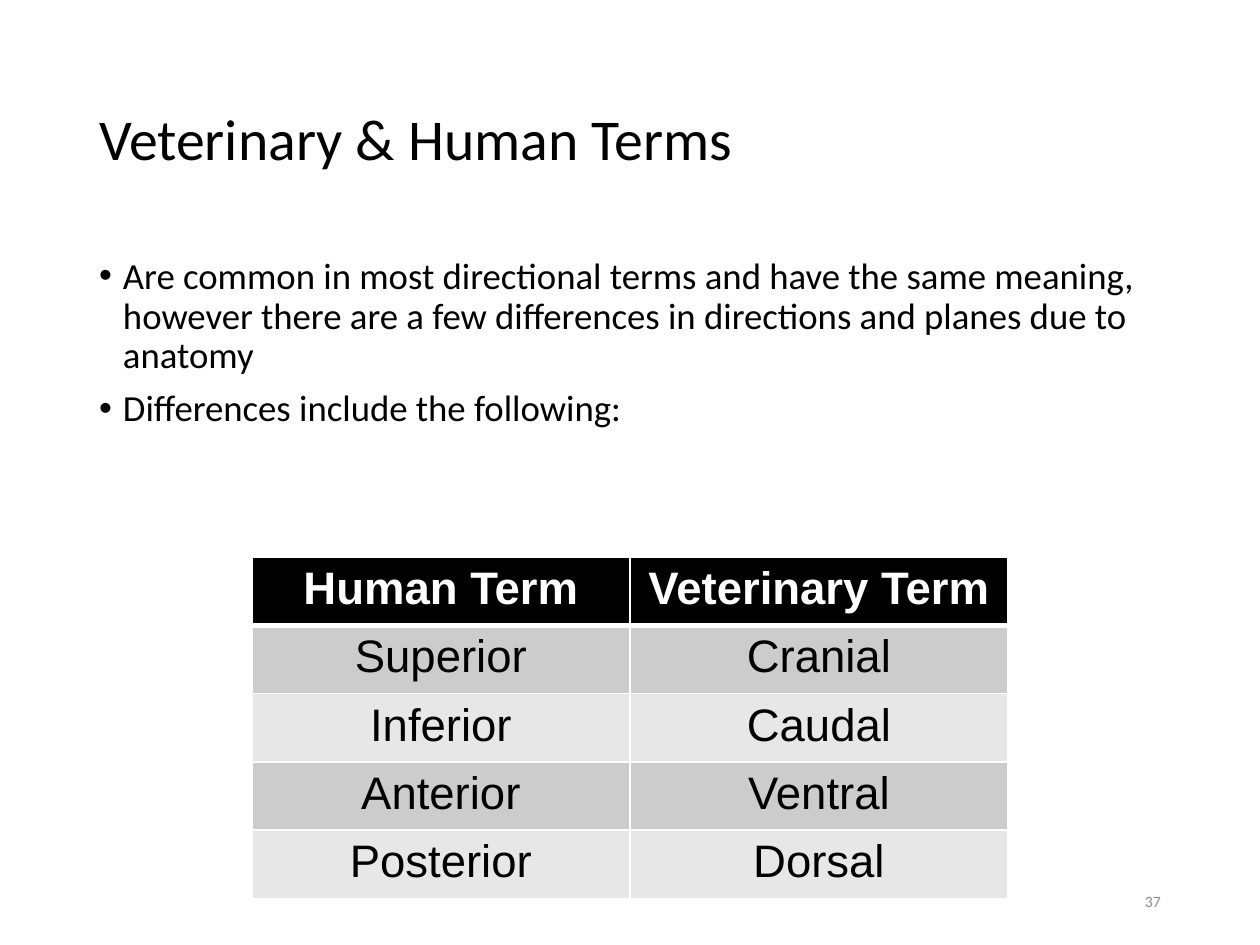
import pptx
import pptx.dml.color
import pptx.enum.text
import pptx.oxml
import pptx.oxml.ns
import pptx.util

Cm = pptx.util.Cm
Pt = pptx.util.Pt
ALIGN = pptx.enum.text.PP_ALIGN
ANCHOR = pptx.enum.text.MSO_ANCHOR
NAMESPACE = pptx.oxml.ns.nsdecls("a")


def color(code):
    return pptx.dml.color.RGBColor.from_string(code)


class SlideBuilder:
    """Holds the style and the current slide, and adds each kind of element."""

    body_font = "Calibri"
    table_font = "Arial"
    black = "000000"
    white = "FFFFFF"
    grey = "8C8C8C"
    bands = ("CCCCCC", "E7E7E7")

    def __init__(self, slide):
        self.slide = slide

    def add_run(self, paragraph, text, size, code, font, bold=False):
        run = paragraph.add_run()
        run.text = text
        run.font.name = font
        run.font.size = Pt(size)
        run.font.bold = bold
        run.font.color.rgb = color(code)

    def add_text(self, box, lines, size, code=black, anchor=ANCHOR.MIDDLE,
                 align=ALIGN.LEFT, spacing=1.0, bullet=False):
        shape = self.slide.shapes.add_textbox(*map(Cm, box))
        frame = shape.text_frame
        frame.word_wrap = True
        frame.vertical_anchor = anchor
        for index, line in enumerate(lines):
            paragraph = frame.add_paragraph() if index else frame.paragraphs[0]
            if bullet:
                self.add_bullet(paragraph)
            paragraph.alignment = align
            paragraph.line_spacing = spacing
            paragraph.space_before = Pt(7.5 if index else 0)
            self.add_run(paragraph, line, size, code, self.body_font)

    def add_bullet(self, paragraph):
        properties = paragraph._p.get_or_add_pPr()
        properties.set("marL", str(Cm(0.48)))
        properties.set("indent", str(Cm(-0.48)))
        for tag in ('buFont {} typeface="Arial"', 'buChar {} char="•"'):
            properties.append(pptx.oxml.parse_xml(f"<a:{tag.format(NAMESPACE)}/>"))

    def add_border(self, cell, side, width):
        cell._tc.get_or_add_tcPr().append(pptx.oxml.parse_xml(
            f'<a:ln{side} {NAMESPACE} w="{Pt(width)}"><a:solidFill>'
            f'<a:srgbClr val="{self.white}"/></a:solidFill></a:ln{side}>'))

    def add_table(self, box, rows, size):
        frame = self.slide.shapes.add_table(len(rows), len(rows[0]), *map(Cm, box))
        for row_index, row in enumerate(rows):
            header = row_index == 0
            fill = self.black if header else self.bands[(row_index - 1) % 2]
            widths = {"L": 1, "R": 1, "T": 3 if row_index == 1 else 1, "B": 3 if header else 1}
            for column_index, text in enumerate(row):
                cell = frame.table.cell(row_index, column_index)
                for side, width in widths.items():
                    self.add_border(cell, side, width)
                cell.fill.solid()
                cell.fill.fore_color.rgb = color(fill)
                paragraph = cell.text_frame.paragraphs[0]
                paragraph.alignment = ALIGN.CENTER
                self.add_run(paragraph, text, size, self.white if header else self.black,
                             self.table_font, header)


def main():
    presentation = pptx.Presentation()
    presentation.slide_width = Cm(25.4)
    presentation.slide_height = Cm(19.05)
    builder = SlideBuilder(presentation.slides.add_slide(presentation.slide_layouts[6]))
    builder.add_text((1.75, 1.01, 21.9, 3.68), ["Veterinary & Human Terms"], 33, spacing=0.9)
    builder.add_text((1.75, 5.07, 21.9, 12.09), [
        "Are common in most directional terms and have the same meaning, "
        "however there are a few differences in directions and planes due to anatomy",
        "Differences include the following:",
    ], 21, anchor=ANCHOR.TOP, spacing=0.9, bullet=True)
    builder.add_text((17.94, 17.66, 5.71, 1.01), ["37"], 9, builder.grey, align=ALIGN.RIGHT)
    builder.add_table((5.08, 11.23, 15.24, 6.88), [
        ("Human Term", "Veterinary Term"),
        ("Superior", "Cranial"),
        ("Inferior", "Caudal"),
        ("Anterior", "Ventral"),
        ("Posterior", "Dorsal"),
    ], 26)
    presentation.save("out.pptx")


if __name__ == "__main__":
    main()
